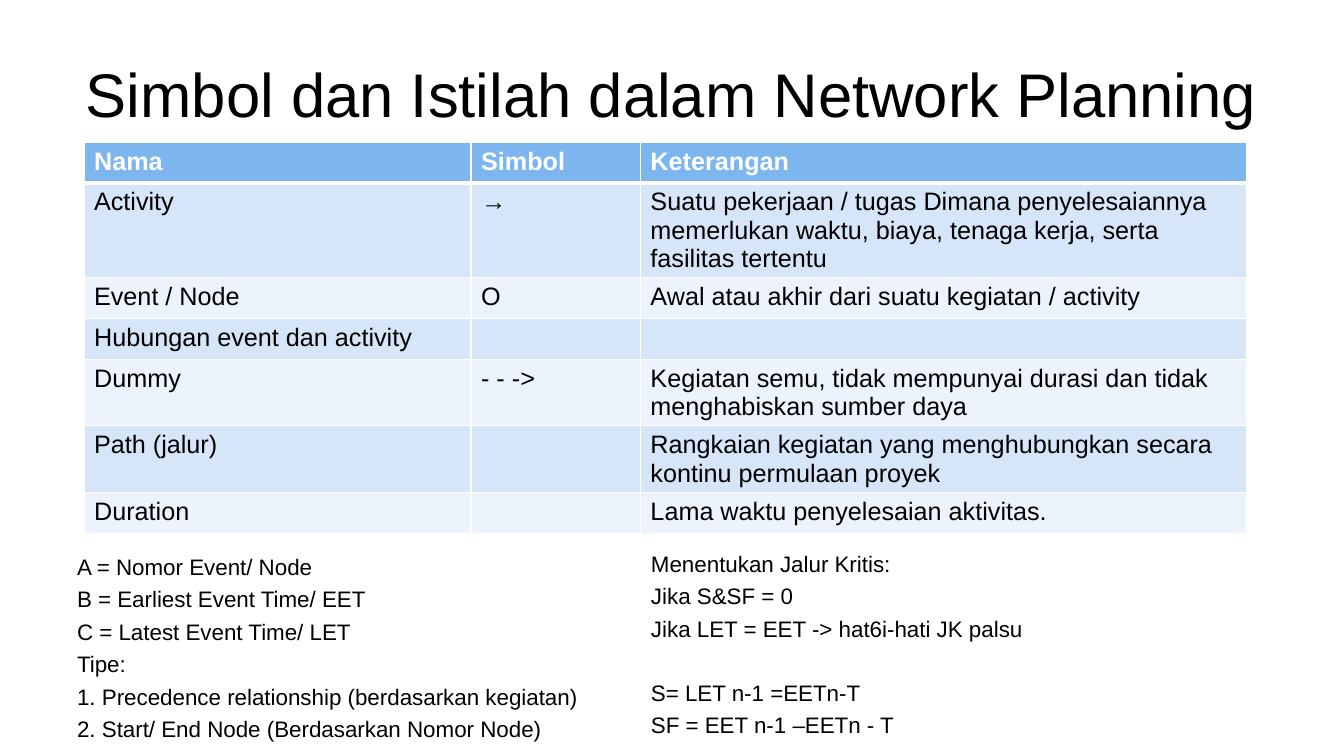
from dataclasses import dataclass
from typing import NamedTuple

from lxml.etree import SubElement
from pptx import Presentation
from pptx.dml.color import RGBColor
from pptx.enum.text import MSO_ANCHOR, MSO_AUTO_SIZE, PP_ALIGN
from pptx.oxml.ns import qn
from pptx.util import Emu, Inches, Pt


@dataclass(frozen=True)
class Theme:
    font: str = "Arial"
    ink: str = "000000"
    paper: str = "FFFFFF"
    header: str = "7DB6EF"
    bands: tuple[str, str] = ("D7E5F9", "ECF3FC")
    title_size: float = 44
    table_size: float = 18
    note_size: float = 16
    note_gap: float = 4
    section_gap: float = 26.4
    rule: float = 1
    header_rule: float = 3


class Area(NamedTuple):
    """Place and size in hundredths of the slide's width and height."""
    left: float
    top: float
    width: float
    height: float


class Term(NamedTuple):
    name: str
    symbol: str
    meaning: str


class Note(NamedTuple):
    text: str
    starts_section: bool = False


class NoteBlock(NamedTuple):
    area: Area
    notes: list[Note]


THEME = Theme()
SLIDE_WIDTH, SLIDE_HEIGHT = Inches(13.333), Inches(7.5)

TITLE = "Simbol dan Istilah dalam Network Planning"
TITLE_AREA = Area(5, 4, 90, 16.7)

TERM_COLUMNS = (28.8, 12.6, 45.1)
TERM_ROW = 5.4
HEADINGS = Term("Nama", "Simbol", "Keterangan")
TERMS = [
    Term("Activity", "→", "Suatu pekerjaan / tugas Dimana penyelesaiannya "
         "memerlukan waktu, biaya, tenaga kerja, serta fasilitas tertentu"),
    Term("Event / Node", "O", "Awal atau akhir dari suatu kegiatan / activity"),
    Term("Hubungan event dan activity", "", ""),
    Term("Dummy", "- - ->", "Kegiatan semu, tidak mempunyai durasi dan tidak "
         "menghabiskan sumber daya"),
    Term("Path (jalur)", "", "Rangkaian kegiatan yang menghubungkan secara "
         "kontinu permulaan proyek"),
    Term("Duration", "", "Lama waktu penyelesaian aktivitas."),
]
TERM_AREA = Area(6.25, 18.8, sum(TERM_COLUMNS), TERM_ROW * (len(TERMS) + 1))

NOTE_BLOCKS = [
    NoteBlock(Area(5, 72.5, 45, 27), [
        Note("A = Nomor Event/ Node"),
        Note("B = Earliest Event Time/ EET"),
        Note("C = Latest Event Time/ LET"),
        Note("Tipe:"),
        Note("1. Precedence relationship (berdasarkan kegiatan)"),
        Note("2. Start/ End Node (Berdasarkan Nomor Node)"),
    ]),
    NoteBlock(Area(47.7, 72.1, 45, 27), [
        Note("Menentukan Jalur Kritis:"),
        Note("Jika S&SF = 0"),
        Note("Jika LET = EET -> hat6i-hati JK palsu"),
        Note("S= LET n-1 =EETn-T", starts_section=True),
        Note("SF = EET n-1 –EETn - T"),
    ]),
]


def across(share: float) -> Emu:
    return Emu(round(SLIDE_WIDTH * share / 100))


def down(share: float) -> Emu:
    return Emu(round(SLIDE_HEIGHT * share / 100))


def place(area: Area) -> tuple[Emu, Emu, Emu, Emu]:
    return across(area.left), down(area.top), across(area.width), down(area.height)


def write(paragraph, text: str, *, size: float, color: str = THEME.ink,
          bold: bool = False, align=PP_ALIGN.LEFT, before: float = 0) -> None:
    """Put formatted text into a paragraph."""
    paragraph.alignment = align
    paragraph.space_before = Pt(before)
    paragraph.font.size = Pt(size)
    if text:
        run = paragraph.add_run()
        run.text = text
        run.font.name = THEME.font
        run.font.size = Pt(size)
        run.font.bold = bold
        run.font.color.rgb = RGBColor.from_string(color)


def draw_title(slide) -> None:
    title = slide.shapes.title
    title.left, title.top, title.width, title.height = place(TITLE_AREA)
    frame = title.text_frame
    frame.auto_size = MSO_AUTO_SIZE.NONE
    frame.vertical_anchor = MSO_ANCHOR.MIDDLE
    write(frame.paragraphs[0], TITLE, size=THEME.title_size, align=PP_ALIGN.CENTER)


def rule_cell(cell, edge_widths: dict[str, float]) -> None:
    """Draw the light rules around a cell."""
    properties = cell._tc.get_or_add_tcPr()
    for edge, width in edge_widths.items():
        line = SubElement(properties, qn(f"a:{edge}"), w=str(Pt(width)))
        fill = SubElement(line, qn("a:solidFill"))
        SubElement(fill, qn("a:srgbClr"), val=THEME.paper)


def draw_terms(slide) -> None:
    rows = [HEADINGS, *TERMS]
    table = slide.shapes.add_table(len(rows), len(TERM_COLUMNS), *place(TERM_AREA)).table
    for column, share in zip(table.columns, TERM_COLUMNS):
        column.width = across(share)
    for index, term in enumerate(rows):
        table.rows[index].height = down(TERM_ROW)
        is_header = index == 0
        fill = THEME.header if is_header else THEME.bands[(index - 1) % 2]
        top = THEME.header_rule if index == 1 else THEME.rule
        bottom = THEME.header_rule if is_header else THEME.rule
        for cell, text in zip(table.rows[index].cells, term):
            rule_cell(cell, {"lnL": THEME.rule, "lnR": THEME.rule,
                             "lnT": top, "lnB": bottom})
            cell.fill.solid()
            cell.fill.fore_color.rgb = RGBColor.from_string(fill)
            write(cell.text_frame.paragraphs[0], text, size=THEME.table_size,
                  color=THEME.paper if is_header else THEME.ink, bold=is_header)


def draw_notes(slide, block: NoteBlock) -> None:
    frame = slide.shapes.add_textbox(*place(block.area)).text_frame
    frame.word_wrap = True
    for index, note in enumerate(block.notes):
        paragraph = frame.add_paragraph() if index else frame.paragraphs[0]
        gap = THEME.section_gap if note.starts_section else THEME.note_gap
        write(paragraph, note.text, size=THEME.note_size, before=gap if index else 0)


def main() -> None:
    deck = Presentation()
    deck.slide_width, deck.slide_height = SLIDE_WIDTH, SLIDE_HEIGHT
    slide = deck.slides.add_slide(deck.slide_layouts.get_by_name("Title Only"))

    # Heading
    draw_title(slide)
    # Symbols and terms
    draw_terms(slide)
    # Legend and critical path rules
    for block in NOTE_BLOCKS:
        draw_notes(slide, block)

    deck.save("out.pptx")


if __name__ == "__main__":
    main()
